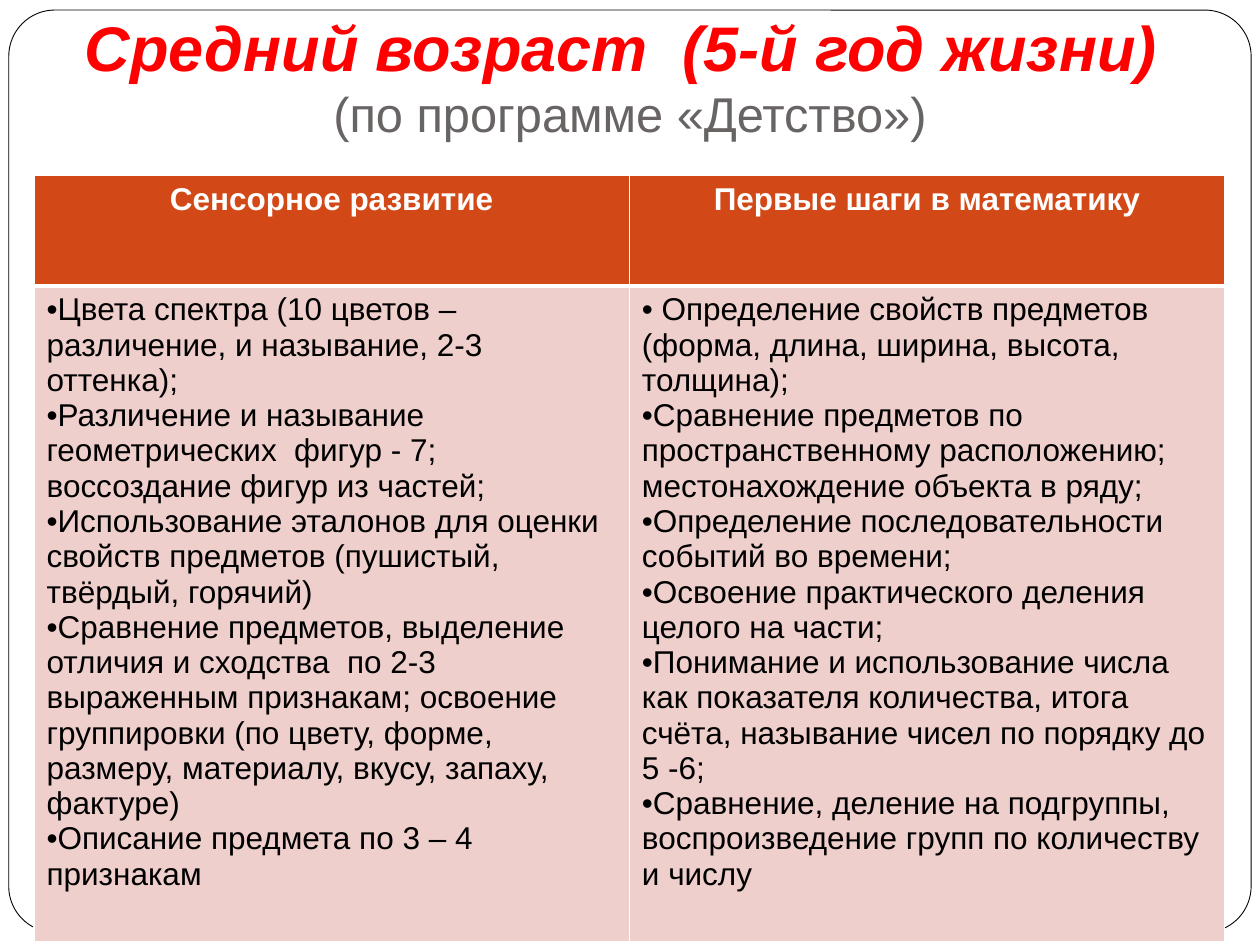
from lxml.etree import SubElement
from pptx import Presentation
from pptx.dml.color import RGBColor
from pptx.enum.shapes import MSO_SHAPE as SHAPE
from pptx.enum.text import MSO_ANCHOR as ANCHOR, PP_ALIGN as ALIGN
from pptx.oxml.ns import qn
from pptx.util import Inches, Pt

FONT = "Arial"
COLORS = {
    "white": "FFFFFF",
    "black": "000000",
    "title": "FF0000",
    "subtitle": "696464",
    "header": "D34817",
    "body": "EFCFCC",
}
COLUMNS = {
    "Сенсорное развитие": [
        "Цвета спектра (10 цветов – различение, и называние, 2-3 оттенка);",
        "Различение и называние геометрических  фигур - 7; воссоздание фигур из частей;",
        "Использование эталонов для оценки свойств предметов (пушистый, твёрдый, горячий)",
        "Сравнение предметов, выделение отличия и сходства  по 2-3  выраженным признакам; "
        "освоение группировки (по цвету, форме, размеру, материалу, вкусу, запаху, фактуре)",
        "Описание предмета по 3 – 4 признакам",
    ],
    "Первые шаги в математику": [
        " Определение свойств предметов (форма, длина, ширина, высота, толщина);",
        "Сравнение предметов по пространственному расположению; "
        "местонахождение объекта в ряду;",
        "Определение последовательности событий во времени;",
        "Освоение практического деления целого на части;",
        "Понимание и использование числа как показателя количества, итога счёта, "
        "называние чисел по порядку до 5 -6;",
        "Сравнение, деление на подгруппы, воспроизведение групп по количеству и числу",
    ],
}


def rgb(name):
    return RGBColor.from_string(COLORS[name])


def style_run(r, size, color, bold=False, italic=False):
    font = r.font
    font.name, font.size = FONT, Pt(size)
    font.bold, font.italic = bold, italic
    font.color.rgb = rgb(color)


def add_frame(slide, x, y, w, h):
    sp = slide.shapes.add_shape(SHAPE.ROUNDED_RECTANGLE, x, y, w, h)
    sp.adjustments[0] = 0.05
    sp.shadow.inherit = False
    sp.fill.solid()
    sp.fill.fore_color.rgb = rgb("white")
    sp.line.color.rgb = rgb("black")
    sp.line.width = Pt(0.5)


def add_title(slide, x, y, w, h):
    tf = slide.shapes.add_textbox(x, y, w, h).text_frame
    tf.word_wrap = True
    tf.vertical_anchor = ANCHOR.BOTTOM
    tf.margin_bottom = Inches(0.1)
    p = tf.paragraphs[0]
    p.text = "Средний возраст  (5-й год жизни) \v(по программе «Детство»)"
    p.alignment = ALIGN.CENTER
    title, subtitle = p.runs
    style_run(title, 36, "title", bold=True, italic=True)
    style_run(subtitle, 27.9, "subtitle")


def set_borders(cell, **widths):
    """Draw white borders; sides are keyed L, R, T, B with widths in points."""
    tcPr = cell._tc.get_or_add_tcPr()
    for i, side in enumerate("LRTB"):
        ln = SubElement(tcPr, qn(f"a:ln{side}"), w=str(Pt(widths.get(side, 1))))
        fill = SubElement(ln, qn("a:solidFill"))
        SubElement(fill, qn("a:srgbClr"), val=COLORS["white"])
        tcPr.insert(i, ln)


def fill_cell(cell, lines, fill, color, header=False):
    cell.fill.solid()
    cell.fill.fore_color.rgb = rgb(fill)
    tf = cell.text_frame
    tf.text = "\n".join(lines)
    for p in tf.paragraphs:
        style_run(p.runs[0], 18, color, bold=header)
        if header:
            p.alignment = ALIGN.CENTER
        else:
            pPr = p._p.get_or_add_pPr()
            SubElement(pPr, qn("a:buFont"), typeface=FONT)
            SubElement(pPr, qn("a:buChar"), char="•")
    set_borders(cell, **{"B" if header else "T": 3})


def add_topics_table(slide, x, y, w, h):
    header_h = Inches(0.88)
    table = slide.shapes.add_table(2, len(COLUMNS), x, y, w, h).table
    table.rows[0].height = header_h
    table.rows[1].height = h - header_h
    for col, (heading, topics) in enumerate(COLUMNS.items()):
        fill_cell(table.cell(0, col), [heading], "header", "white", header=True)
        fill_cell(table.cell(1, col), topics, "body", "black")


def main():
    prs = Presentation()
    prs.slide_width, prs.slide_height = Inches(10), Inches(7.5)
    slide = prs.slides.add_slide(prs.slide_layouts[6])
    add_frame(slide, Inches(0.07), Inches(0.08), Inches(9.86), Inches(7.32))
    add_title(slide, Inches(0.5), Inches(0.3), Inches(9), Inches(0.93))
    add_topics_table(slide, Inches(0.27), Inches(1.39), Inches(9.45), Inches(5.9))
    prs.save("out.pptx")


if __name__ == "__main__":
    main()
